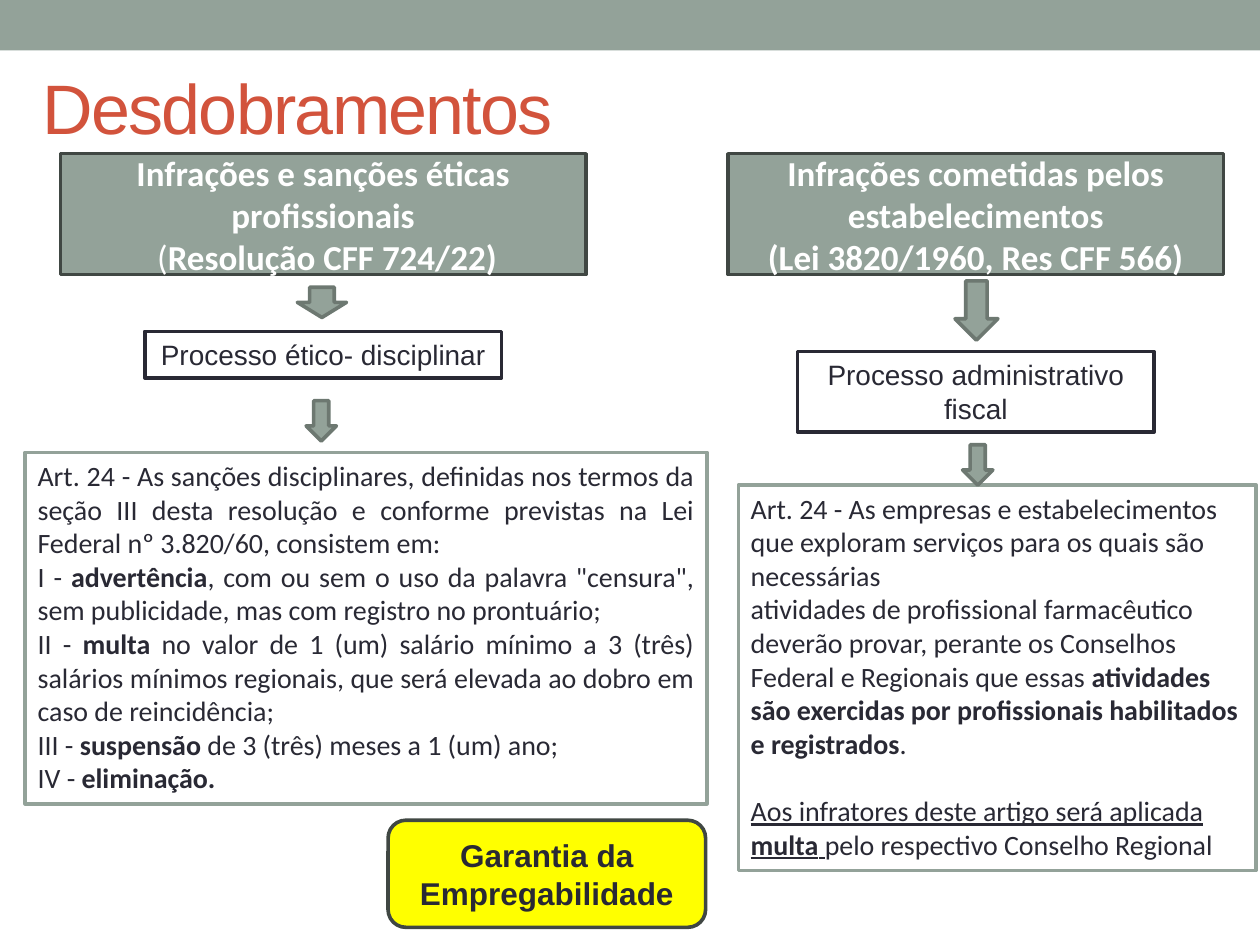
from pptx import Presentation
from pptx.dml.color import RGBColor
from pptx.enum.shapes import MSO_SHAPE
from pptx.enum.text import MSO_ANCHOR, MSO_AUTO_SIZE, PP_ALIGN
from pptx.util import Inches, Pt

RECT, ROUNDED, DOWN = MSO_SHAPE.RECTANGLE, MSO_SHAPE.ROUNDED_RECTANGLE, MSO_SHAPE.DOWN_ARROW
LEFT, CENTER, JUSTIFY = PP_ALIGN.LEFT, PP_ALIGN.CENTER, PP_ALIGN.JUSTIFY
TOP, MIDDLE = MSO_ANCHOR.TOP, MSO_ANCHOR.MIDDLE
FIXED, GROW = MSO_AUTO_SIZE.NONE, MSO_AUTO_SIZE.SHAPE_TO_FIT_TEXT

COLORS = {
    "sage": "93A299", "sage_dark": "6D7871", "slate": "404743", "ink": "292934",
    "title": "D2533C", "white": "FFFFFF", "yellow": "FFFF00",
}

prs = Presentation()
prs.slide_width, prs.slide_height = Inches(10), Inches(7.5)
COL, ROW = prs.slide_width / 100, prs.slide_height / 75
slide = prs.slides.add_slide(prs.slide_layouts[6])


def add_block(kind, left, top, width, height, fill=None, line=None):
    box = [int(left * COL), int(top * ROW), int(width * COL), int(height * ROW)]
    if kind is None:
        return slide.shapes.add_textbox(*box)
    block = slide.shapes.add_shape(kind, *box)
    block.shadow.inherit = False
    block.fill.solid()
    block.fill.fore_color.rgb = RGBColor.from_string(COLORS[fill])
    if line:
        block.line.color.rgb = RGBColor.from_string(COLORS[line])
        block.line.width = Pt(2.08)
    else:
        block.line.fill.background()
    return block


def write(block, paragraphs, size=16, font="Calibri", color="ink", align=LEFT,
          anchor=TOP, fit=FIXED, tracking=None, last_gap=0):
    frame = block.text_frame
    frame.word_wrap = True
    frame.auto_size = fit
    frame.vertical_anchor = anchor
    for i, runs in enumerate(paragraphs):
        paragraph = frame.paragraphs[0] if i == 0 else frame.add_paragraph()
        paragraph.alignment = align
        if last_gap and i == len(paragraphs) - 1:
            paragraph.space_before = Pt(last_gap)
        for text, style in runs:
            run = paragraph.add_run()
            run.text = text
            run.font.size = Pt(size)
            run.font.name = font
            run.font.bold = "b" in style
            run.font.underline = "u" in style
            run.font.color.rgb = RGBColor.from_string(COLORS[color])
            if tracking is not None:
                run.font._element.set("spc", str(tracking * 100))


add_block(RECT, 0, 0, 100, 4, "sage")
title = add_block(None, 2.4, 3.8, 80.8, 9.3)
write(title, [[("Desdobramentos", "")]], size=40, font="Arial", color="title",
      anchor=MIDDLE, tracking=-1)

headings = [
    (4.8, 41.7, [[("Infrações e sanções éticas profissionais", "b")],
                 [(" ", "b"), ("(", ""), ("Resolução CFF 724/22)", "b")]]),
    (57.8, 39.3, [[("Infrações cometidas pelos estabelecimentos", "b")],
                  [("(Lei 3820/1960, Res CFF 566)", "b")]]),
]
for left, width, heading in headings:
    write(add_block(RECT, left, 12.2, width, 9.6, "sage", "slate"), heading,
          size=20, color="white", align=CENTER, anchor=MIDDLE)

processes = [
    (11.5, 26.3, 3.7, "Processo ético- disciplinar"),
    (63.3, 27.9, 6.4, "Processo administrativo fiscal"),
]
for left, top, height, process in processes:
    write(add_block(RECT, left, top, 28.3, height, "white", "ink"), [[(process, "")]],
          font="Arial", align=CENTER, fit=GROW)

sanctions = [
    [("Art. 24 - As sanções disciplinares, definidas nos termos da seção III desta "
      "resolução e conforme previstas na Lei Federal nº 3.820/60, consistem em:", "")],
    [("I - ", ""), ("advertência", "b"),
     (", com ou sem o uso da palavra \"censura\", sem publicidade, mas com registro "
      "no prontuário;", "")],
    [("II - ", ""), ("multa", "b"),
     (" no valor de 1 (um) salário mínimo a 3 (três) salários mínimos regionais, "
      "que será elevada ao dobro em caso de reincidência;", "")],
    [("III - ", ""), ("suspensão", "b"), (" de 3 (três) meses a 1 (um) ano;", "")],
    [("IV - ", ""), ("eliminação.", "b")],
]
duties = [
    [("Art. 24 - As empresas e estabelecimentos que exploram serviços para os quais "
      "são necessárias", "")],
    [("atividades de profissional farmacêutico deverão provar, perante os Conselhos "
      "Federal e Regionais que essas ", ""),
     ("atividades são exercidas por profissionais habilitados e registrados", "b"),
     (".", "")],
    [("Aos infratores deste artigo será aplicada ", "u"), ("multa", "bu"), (" ", "u"),
     ("pelo respectivo Conselho Regional", "")],
]
articles = [
    (2, 35.9, 54.1, 27.9, sanctions, JUSTIFY, 0),
    (58.6, 38.5, 41.1, 30.6, duties, LEFT, 19.2),
]
for left, top, width, height, article, align, gap in articles:
    write(add_block(RECT, left, top, width, height, "white", "sage"), article,
          align=align, fit=GROW, last_gap=gap)

arrows = [
    (23.6, 22.8, 3.9, 2.4),
    (24.3, 31.8, 2.4, 3.2),
    (75.8, 22.3, 3.4, 4.7),
    (76.4, 35.3, 2.4, 3.2),
]
for arrow in arrows:
    add_block(DOWN, *arrow, "sage", "sage_dark")

guarantee = add_block(ROUNDED, 30.8, 65.1, 25.2, 8.5, "yellow", "slate")
write(guarantee, [[("Garantia da Empregabilidade", "b")]], size=18, font="Arial",
      align=CENTER, anchor=MIDDLE)

prs.save("out.pptx")
